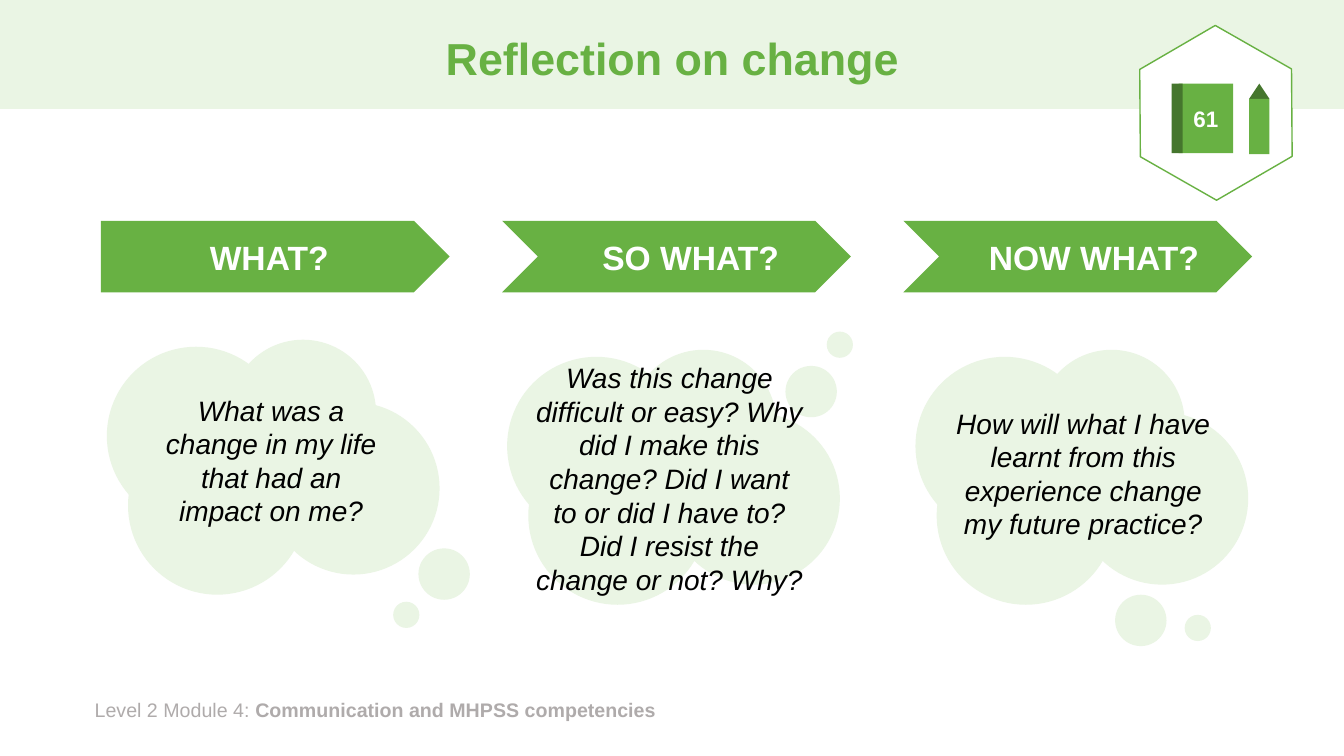
from pptx import Presentation
from pptx.dml.color import RGBColor
from pptx.enum.shapes import MSO_SHAPE
from pptx.enum.text import MSO_ANCHOR, PP_ALIGN
from pptx.util import Emu, Pt

PX = 9144  # EMU per px, 100 px to the inch
GREEN, DARK_GREEN, PALE_GREEN = "68B143", "45762D", "EAF5E4"
WHITE, BLACK, GREY = "FFFFFF", "000000", "AFABAB"

COLUMN_LEFT, COLUMN_PITCH = 100, 398
# Circles as left, top and diameter, relative to the cloud's corner
CLOUD_CIRCLES = [(0, 7, 177), (122, 0, 145), (21, 76, 177), (159, 62, 171)]
# Arrow shape, label, label box, cloud corner, two bubbles, question, question box
COLUMNS = [
    (MSO_SHAPE.PENTAGON, "WHAT?", (161, 230, 212, 50),
     (106, 337), [(309, 207, 51), (284, 260, 26)],
     "What was a change in my life that had an impact on me?",
     (145, 385, 248, 145)),
    (MSO_SHAPE.CHEVRON, "SO WHAT?", (579, 230, 212, 50),
     (503, 347), [(276, 16, 51), (317, -18, 26)],
     "Was this change difficult or easy? Why did I make this change? "
     "Did I want to or did I have to? Did I resist the change or not? Why?",
     (520, 353, 288, 246)),
    (MSO_SHAPE.CHEVRON, "NOW WHAT?", (943, 230, 284, 50),
     (908, 347), [(198, 243, 51), (267, 263, 26)],
     "How will what I have learnt from this experience change my future practice?",
     (933, 398, 283, 145)),
]


def px(*lengths):
    return [Emu(length * PX) for length in lengths]


def color(value):
    return RGBColor.from_string(value)


def add_shape(shapes, kind, box, fill, line=None):
    shape = shapes.add_shape(kind, *px(*box))
    shape.shadow.inherit = False
    shape.fill.solid()
    shape.fill.fore_color.rgb = color(fill)
    if line:
        shape.line.color.rgb = color(line)
        shape.line.width = Pt(1)
    else:
        shape.line.fill.background()
    return shape


def add_run(para, text, size, font_color, bold=False, italic=False):
    run = para.add_run()
    run.text = text
    font = run.font
    font.name, font.size = "Arial", Pt(size)
    font.bold, font.italic = bold, italic
    font.color.rgb = color(font_color)


def add_text_box(slide, box, align):
    """Add a wrapping text box and return its first paragraph."""
    frame = slide.shapes.add_textbox(*px(*box)).text_frame
    frame.word_wrap = True
    para = frame.paragraphs[0]
    para.alignment = align
    return para


def add_header(slide, box):
    left, top, width, height = box
    band = add_shape(slide.shapes, MSO_SHAPE.RECTANGLE, box, PALE_GREEN)
    slide.shapes._spTree.insert(2, band._element)  # behind the title
    title = slide.shapes.title
    title.left, title.top, title.width, title.height = px(
        left + 92, top + 13, 1150, height - 13)
    title.text_frame.vertical_anchor = MSO_ANCHOR.MIDDLE
    para = title.text_frame.paragraphs[0]
    para.alignment = PP_ALIGN.CENTER
    para.line_spacing = 0.9
    add_run(para, "Reflection on change", 32, GREEN, bold=True)


def add_footer(slide, box):
    para = add_text_box(slide, box, PP_ALIGN.LEFT)
    add_run(para, "Level 2 Module 4: ", 14, GREY)
    add_run(para, "Communication and MHPSS competencies", 14, GREY, bold=True)


def add_arrow(slide, kind, box, label, label_box):
    add_shape(slide.shapes, kind, box, GREEN)
    para = add_text_box(slide, label_box, PP_ALIGN.CENTER)
    add_run(para, label, 24, WHITE, bold=True)


def add_cloud(slide, corner, bubbles, question, question_box):
    left, top = corner
    cloud = slide.shapes.add_group_shape()
    for x, y, diameter in CLOUD_CIRCLES + bubbles:
        add_shape(cloud.shapes, MSO_SHAPE.OVAL,
                  (left + x, top + y, diameter, diameter), PALE_GREEN)
    para = add_text_box(slide, question_box, PP_ALIGN.CENTER)
    add_run(para, question, 20, BLACK, italic=True)


def add_page_badge(slide, box):
    """Draw a hexagon holding a numbered notebook and a pencil."""
    left, top = box[:2]
    badge = slide.shapes.add_group_shape().shapes
    hexagon = add_shape(badge, MSO_SHAPE.HEXAGON, box, WHITE, GREEN)
    hexagon.adjustments[0] = 0.29
    hexagon.rotation = 29.7

    notebook = add_shape(badge, MSO_SHAPE.RECTANGLE,
                         (left + 50, top + 46, 54, 69), GREEN)
    frame = notebook.text_frame
    frame.word_wrap = False
    frame.vertical_anchor = MSO_ANCHOR.MIDDLE
    para = frame.paragraphs[0]
    para.alignment = PP_ALIGN.CENTER
    add_run(para, "61", 16, WHITE, bold=True)

    add_shape(badge, MSO_SHAPE.RECTANGLE, (left + 43, top + 46, 11, 69), DARK_GREEN)
    add_shape(badge, MSO_SHAPE.ISOSCELES_TRIANGLE,
              (left + 120, top + 46, 20, 15), DARK_GREEN)
    add_shape(badge, MSO_SHAPE.RECTANGLE, (left + 120, top + 61, 20, 55), GREEN)


def main():
    deck = Presentation()
    deck.slide_width, deck.slide_height = px(1333, 750)
    slide = deck.slides.add_slide(deck.slide_layouts[5])
    add_header(slide, (0, 0, 1333, 108))
    add_footer(slide, (84, 687, 682, 34))
    for index, (kind, label, label_box, *_) in enumerate(COLUMNS):
        arrow_box = (COLUMN_LEFT + index * COLUMN_PITCH, 219, 346, 71)
        add_arrow(slide, kind, arrow_box, label, label_box)
    for _, _, _, corner, bubbles, question, question_box in COLUMNS:
        add_cloud(slide, corner, bubbles, question, question_box)
    add_page_badge(slide, (1119, 37, 174, 150))
    deck.save("out.pptx")


if __name__ == "__main__":
    main()
